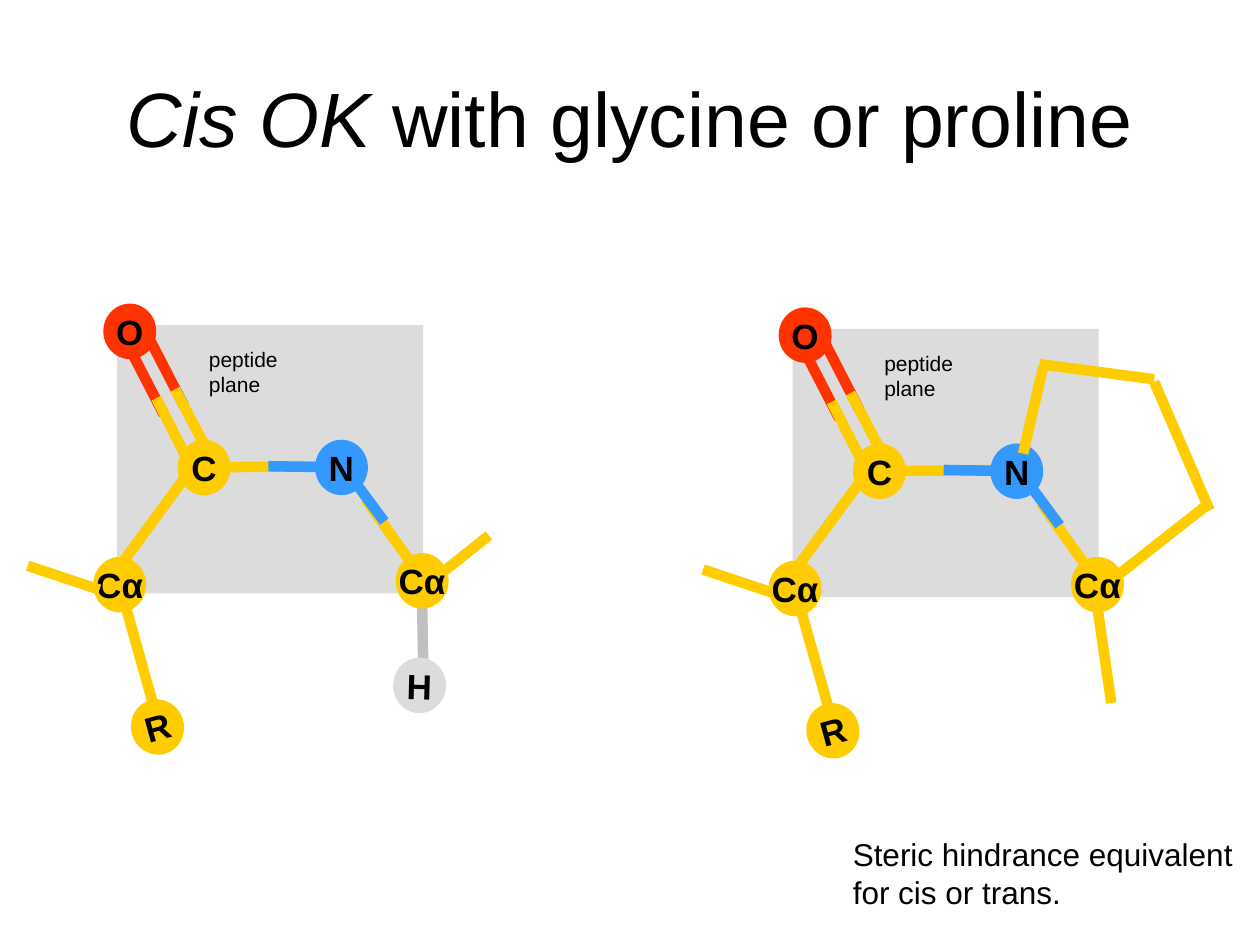
import pptx
import pptx.util
import pptx.dml.color
import pptx.enum.shapes
import pptx.enum.text
import pptx.oxml

FONT = "Arial"
YELLOW, RED, BLUE = "FFCC00", "FF3300", "3399FF"
GREY, DARK_GREY, BLACK = "DCDCDC", "C0C0C0", "000000"
ATOM_W, ATOM_H = 0.42, 0.44

# Geometry in inches, in the frame of the left molecule
# Bonds: x1, y1, x2, y2, colour; atoms: label, left, top, colour, rotation
TAIL = [(0.79, 4.68, 0.22, 4.49, YELLOW)]
R_BOND = [(1.23, 5.64, 0.96, 4.68, YELLOW)]
R_ATOM = [("R", 1.04, 5.55, YELLOW, 344.6)]
PLANE = (0.93, 2.58, 2.43, 2.13)
PLANE_LABEL = (1.56, 2.70, 1.20, 0.30)
CORE_BONDS = [
    (0.98, 2.67, 1.30, 3.29, RED),
    (1.24, 3.16, 1.52, 3.71, YELLOW),
    (2.60, 3.70, 1.53, 3.71, YELLOW),
    (2.73, 3.71, 2.13, 3.70, BLUE),
    (0.88, 4.59, 1.52, 3.72, YELLOW),
    (3.38, 4.63, 2.90, 3.96, YELLOW),
    (3.05, 4.14, 2.71, 3.68, BLUE),
    (1.14, 2.60, 1.46, 3.22, RED),
    (1.39, 3.09, 1.68, 3.64, YELLOW),
]
CORE_ATOMS = [
    ("Cα", 0.74, 4.42, YELLOW, 0),
    ("C", 1.41, 3.49, YELLOW, 0),
    ("O", 0.82, 2.41, RED, 0),
    ("N", 2.50, 3.49, BLUE, 0),
    ("Cα", 3.14, 4.39, YELLOW, 0),
]

# Parts that differ: glycine's hydrogen, proline's ring
GLYCINE_BRANCH = [(3.88, 4.25, 3.44, 4.60, YELLOW)]
H_BOND = [(3.36, 5.31, 3.35, 4.79, DARK_GREY)]
H_ATOM = [("H", 3.12, 5.22, GREY, 1.6)]
RING_BACK = [(4.23, 3.97, 3.43, 4.60, YELLOW)]
PROLINE_BRANCH = [(3.46, 5.55, 3.35, 4.79, YELLOW)]
RING_FRONT = [
    (2.92, 2.88, 2.76, 3.57, YELLOW),
    (3.80, 2.98, 2.89, 2.86, YELLOW),
    (4.24, 4.02, 3.80, 3.00, YELLOW),
]
GLYCINE_AT, PROLINE_AT = (0, 0), (5.36, 0.03)

TITLE = [("Cis OK ", True), ("with glycine or proline", False)]
NOTE = "Steric hindrance equivalent\nfor cis or trans."

inch = pptx.util.Inches
prs = pptx.Presentation()
prs.slide_width, prs.slide_height = inch(10), inch(7.5)
s = prs.slides.add_slide(prs.slide_layouts[5])


def rgb(colour):
    return pptx.dml.color.RGBColor.from_string(colour)


def style(font, size, bold=False, italic=False):
    font.name, font.size = FONT, pptx.util.Pt(size)
    font.bold, font.italic = bold, italic
    font.color.rgb = rgb(BLACK)


def add_bonds(bonds, origin):
    dx, dy = origin
    for x1, y1, x2, y2, colour in bonds:
        c = s.shapes.add_connector(
            pptx.enum.shapes.MSO_CONNECTOR.STRAIGHT,
            inch(x1 + dx), inch(y1 + dy), inch(x2 + dx), inch(y2 + dy))
        c.line.color.rgb = rgb(colour)
        c.line.width = pptx.util.Pt(6)
        c._element.spPr.append(pptx.oxml.parse_xml(
            '<a:effectLst xmlns:a="http://schemas.openxmlformats.org/drawingml/2006/main"/>'))


def add_filled(kind, left, top, width, height, colour):
    sp = s.shapes.add_shape(kind, inch(left), inch(top), inch(width), inch(height))
    sp.shadow.inherit = False
    sp.fill.solid()
    sp.fill.fore_color.rgb = rgb(colour)
    sp.line.fill.background()
    return sp


def add_atoms(atoms, origin):
    dx, dy = origin
    for label, left, top, colour, rotation in atoms:
        sp = add_filled(pptx.enum.shapes.MSO_SHAPE.OVAL,
                        left + dx, top + dy, ATOM_W, ATOM_H, colour)
        sp.rotation = rotation
        tf = sp.text_frame
        tf.word_wrap = False
        tf.vertical_anchor = pptx.enum.text.MSO_ANCHOR.MIDDLE
        p = tf.paragraphs[0]
        p.text = label
        p.alignment = pptx.enum.text.PP_ALIGN.CENTER
        style(p.runs[0].font, 20, bold=True)


def add_text(text, left, top, width, height, size):
    tf = s.shapes.add_textbox(inch(left), inch(top), inch(width), inch(height)).text_frame
    tf.word_wrap = True
    tf.text = text
    for p in tf.paragraphs:
        for r in p.runs:
            style(r.font, size)


def add_plane(origin):
    dx, dy = origin
    left, top, width, height = PLANE
    add_filled(pptx.enum.shapes.MSO_SHAPE.RECTANGLE,
               left + dx, top + dy, width, height, GREY)


def add_core(origin):
    dx, dy = origin
    add_bonds(CORE_BONDS, origin)
    add_atoms(CORE_ATOMS, origin)
    left, top, width, height = PLANE_LABEL
    add_text("peptide\vplane", left + dx, top + dy, width, height, 12)


# Title
title = s.shapes.title
title.left, title.top, title.width, title.height = map(inch, (0.5, 0.3, 9, 1.25))
title.text_frame.vertical_anchor = pptx.enum.text.MSO_ANCHOR.MIDDLE
p = title.text_frame.paragraphs[0]
p.alignment = pptx.enum.text.PP_ALIGN.CENTER
for text, italic in TITLE:
    r = p.add_run()
    r.text = text
    style(r.font, 44, italic=italic)

# Glycine, with the tail in front
add_bonds(GLYCINE_BRANCH + R_BOND, GLYCINE_AT)
add_atoms(R_ATOM, GLYCINE_AT)
add_bonds(H_BOND, GLYCINE_AT)
add_atoms(H_ATOM, GLYCINE_AT)
add_plane(GLYCINE_AT)
add_core(GLYCINE_AT)
add_bonds(TAIL, GLYCINE_AT)

# Proline, with the tail behind and the ring closing in front
add_bonds(TAIL + RING_BACK + R_BOND, PROLINE_AT)
add_atoms(R_ATOM, PROLINE_AT)
add_bonds(PROLINE_BRANCH, PROLINE_AT)
add_plane(PROLINE_AT)
add_core(PROLINE_AT)
add_bonds(RING_FRONT, PROLINE_AT)

# Note
add_text(NOTE, 6.67, 6.58, 3.3, 0.7, 18)

prs.save("out.pptx")
